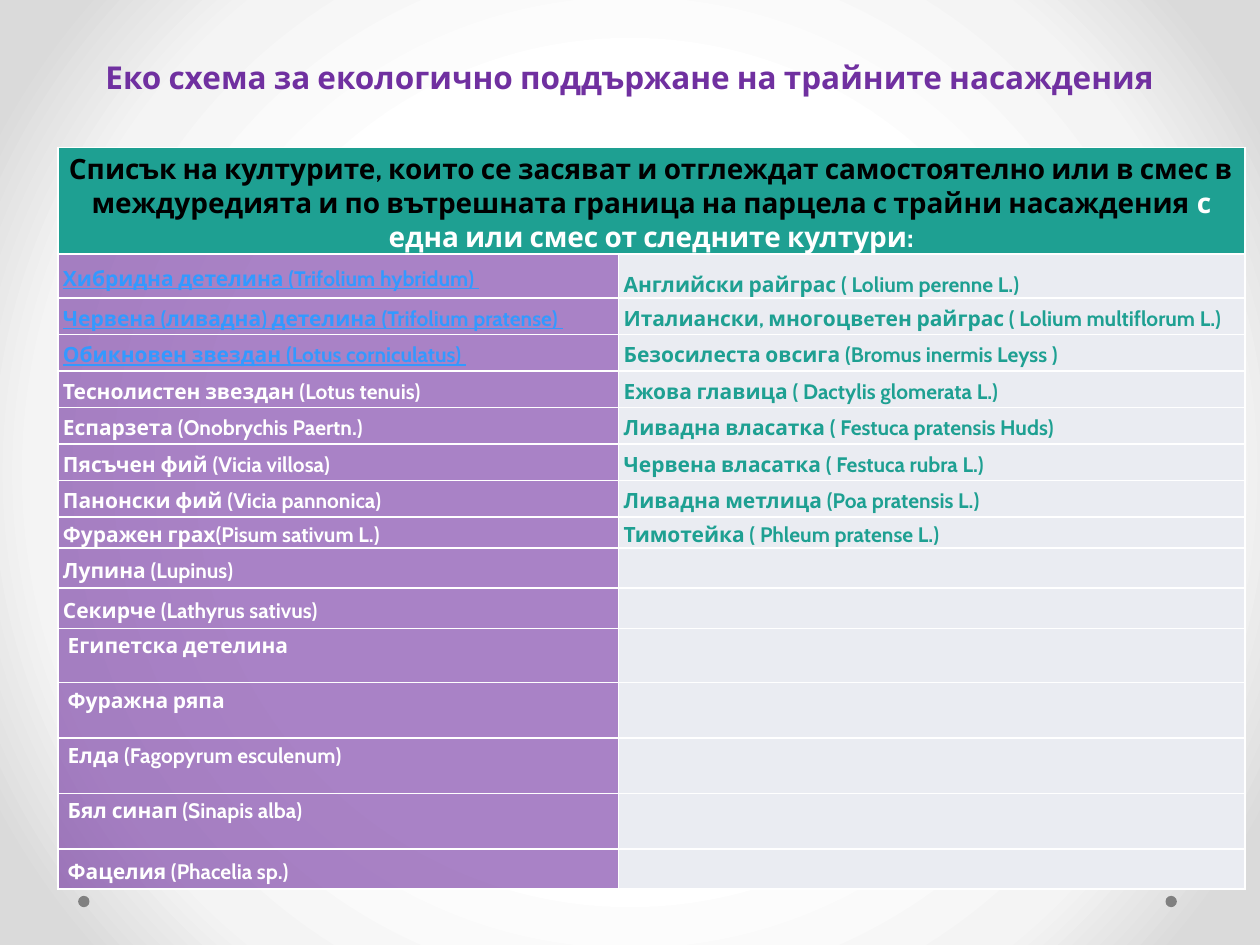
"""Build a slide listing the crops sown between rows of permanent plantations."""
from dataclasses import dataclass

from lxml.etree import SubElement
from pptx import Presentation
from pptx.dml.color import RGBColor
from pptx.enum.shapes import MSO_SHAPE
from pptx.enum.text import MSO_ANCHOR, PP_ALIGN
from pptx.oxml import parse_xml
from pptx.oxml.ns import nsdecls, qn
from pptx.slide import Slide
from pptx.table import Table, _Cell
from pptx.util import Inches, Pt

PURPLE = RGBColor(0x70, 0x30, 0xA0)
TEAL = RGBColor(0x1E, 0xA0, 0x92)
PALE = RGBColor(0xEA, 0xEC, 0xF2)
LINK_BLUE = RGBColor(0x33, 0x99, 0xFF)
GRAY = RGBColor(0x80, 0x80, 0x80)
WHITE = RGBColor(0xFF, 0xFF, 0xFF)
BLACK = RGBColor(0, 0, 0)
FONT = "Cabin"
BACKGROUND_STOPS = ((50, "FFFFFF"), (76, "F4F4F4"), (92, "DADADA"))
HEADER_HEIGHT = 0.83
COLUMN_WIDTHS = (4.45, 4.97)
HEADER = (
    ("Списък на културите, които се засяват и отглеждат самостоятелно или в смес в "
     "междуредията и по вътрешната граница на парцела с трайни насаждения ", BLACK),
    ("с една или смес от следните култури:", WHITE),
)


@dataclass(frozen=True)
class CropRow:
    left: str
    right: str = ""
    height: float = 0.29
    linked: bool = False
    anchor: MSO_ANCHOR = MSO_ANCHOR.MIDDLE
    right_spacing: float = 1.0


CROPS = (
    CropRow("Хибридна детелина (Trifolium hybridum) ", "Английски райграс ( Lolium perenne L.)",
            height=0.35, linked=True, right_spacing=1.5),
    CropRow("Червена (ливадна) детелина (Trifolium pratense) ",
            "Италиански, многоцвeтен райграс ( Lolium multiflorum L.)", linked=True),
    CropRow("Обикновен звездан (Lotus corniculatus) ",
            "Безосилеста овсига (Bromus inermis Leyss )", linked=True),
    CropRow("Теснолистен звездан (Lotus tenuis)", "Ежова главица ( Dactylis glomerata L.)"),
    CropRow("Еспарзета (Onobrychis Paertn.)", "Ливадна власатка ( Festuca pratensis Huds)"),
    CropRow("Пясъчен фий (Vicia villosa)", "Червена власатка ( Festuca rubra L.)"),
    CropRow("Панонски фий (Vicia pannonica)", "Ливадна метлица (Poa pratensis L.)"),
    CropRow("Фуражен грах(Pisum sativum L.)", "Тимотейка ( Phleum pratense L.)", height=0.24),
    CropRow("Лупина (Lupinus)"),
    CropRow("Секирче (Lathyrus sativus)"),
    CropRow(" Египетска детелина", height=0.43, anchor=MSO_ANCHOR.TOP),
    CropRow(" Фуражна ряпа", height=0.44, anchor=MSO_ANCHOR.TOP),
    CropRow(" Елда (Fagopyrum esculenum)", height=0.44, anchor=MSO_ANCHOR.TOP),
    CropRow(" Бял синап (Sinapis alba)", height=0.44, anchor=MSO_ANCHOR.TOP),
    CropRow(" Фацелия (Phacelia sp.)", height=0.24),
)


def set_background(slide: Slide) -> None:
    slide.background.fill.solid()
    solid = slide.element.find(f".//{qn('p:bgPr')}/{qn('a:solidFill')}")
    stops = "".join(f'<a:gs pos="{position * 1000}"><a:srgbClr val="{color}"/></a:gs>'
                    for position, color in BACKGROUND_STOPS)
    gradient = parse_xml(
        f'<a:gradFill {nsdecls("a")} rotWithShape="1"><a:gsLst>{stops}</a:gsLst>'
        '<a:path path="circle"><a:fillToRect l="50000" t="50000" r="50000" b="50000"/>'
        '</a:path></a:gradFill>')
    solid.getparent().replace(solid, gradient)


def add_dot(slide: Slide, left: float) -> None:
    dot = slide.shapes.add_shape(
        MSO_SHAPE.OVAL, Inches(left), Inches(7.11), Inches(0.09), Inches(0.09))
    dot.shadow.inherit = False
    dot.fill.solid()
    dot.fill.fore_color.rgb = GRAY
    dot.line.fill.background()


def add_title(slide: Slide) -> None:
    title = slide.shapes.title
    title.left, title.top = Inches(0.46), Inches(0.41)
    title.width, title.height = Inches(9.08), Inches(0.4)
    frame = title.text_frame
    frame.text = "Еко схема за екологично поддържане на трайните насаждения"
    frame.vertical_anchor = MSO_ANCHOR.MIDDLE
    paragraph = frame.paragraphs[0]
    paragraph.alignment = PP_ALIGN.CENTER
    font = paragraph.font
    font.name, font.size, font.bold = FONT, Pt(18), True
    font.color.rgb = PURPLE


def style_cell(cell: _Cell, fill: RGBColor, opacity: int = 100) -> None:
    cell.margin_left = cell.margin_right = cell.margin_top = Inches(0.04)
    cell.margin_bottom = 0
    cell.vertical_anchor = MSO_ANCHOR.MIDDLE
    properties = cell._tc.get_or_add_tcPr()
    for side in ("lnL", "lnR", "lnT", "lnB"):
        border = SubElement(properties, qn(f"a:{side}"), w=str(Pt(1)))
        SubElement(SubElement(border, qn("a:solidFill")), qn("a:srgbClr"), val=str(WHITE))
    cell.fill.solid()
    cell.fill.fore_color.rgb = fill
    if opacity < 100:
        color = properties.find(f"{qn('a:solidFill')}/{qn('a:srgbClr')}")
        SubElement(color, qn("a:alpha"), val=str(opacity * 1000))


def write_crop(cell: _Cell, text: str, color: RGBColor, linked: bool = False) -> None:
    paragraph = cell.text_frame.paragraphs[0]
    paragraph.add_run().text = text
    for font in (paragraph.font, paragraph.runs[0].font):
        font.name, font.size, font.bold = FONT, Pt(12), True
        font.color.rgb = color
        font.underline = linked


def write_header(table: Table) -> None:
    cell = table.cell(0, 0)
    cell.merge(table.cell(0, 1))
    for header_cell in table.rows[0].cells:
        style_cell(header_cell, TEAL)
    paragraph = cell.text_frame.paragraphs[0]
    paragraph.alignment = PP_ALIGN.CENTER
    for text, color in HEADER:
        run = paragraph.add_run()
        run.text = text
        run.font.name, run.font.size, run.font.bold = FONT, Pt(16), True
        run.font.color.rgb = color


def add_crop_table(slide: Slide) -> None:
    heights = (HEADER_HEIGHT, *(crop.height for crop in CROPS))
    table = slide.shapes.add_table(
        len(heights), len(COLUMN_WIDTHS), Inches(0.46), Inches(1.17),
        Inches(sum(COLUMN_WIDTHS)), Inches(sum(heights))).table
    table.first_row = table.horz_banding = False
    for column, width in zip(table.columns, COLUMN_WIDTHS):
        column.width = Inches(width)
    for row, height in zip(table.rows, heights):
        row.height = Inches(height)
    write_header(table)
    for index, crop in enumerate(CROPS, start=1):
        left, right = table.cell(index, 0), table.cell(index, 1)
        style_cell(left, PURPLE, opacity=60)
        style_cell(right, PALE)
        left.vertical_anchor = crop.anchor
        write_crop(left, crop.left, LINK_BLUE if crop.linked else WHITE, crop.linked)
        write_crop(right, crop.right, TEAL)
        right.text_frame.paragraphs[0].line_spacing = crop.right_spacing


def main() -> None:
    presentation = Presentation()
    presentation.slide_width, presentation.slide_height = Inches(10), Inches(7.5)
    slide = presentation.slides.add_slide(presentation.slide_layouts[5])
    set_background(slide)
    for left in (9.25, 0.62):
        add_dot(slide, left)
    add_title(slide)
    add_crop_table(slide)
    presentation.save("out.pptx")


if __name__ == "__main__":
    main()
